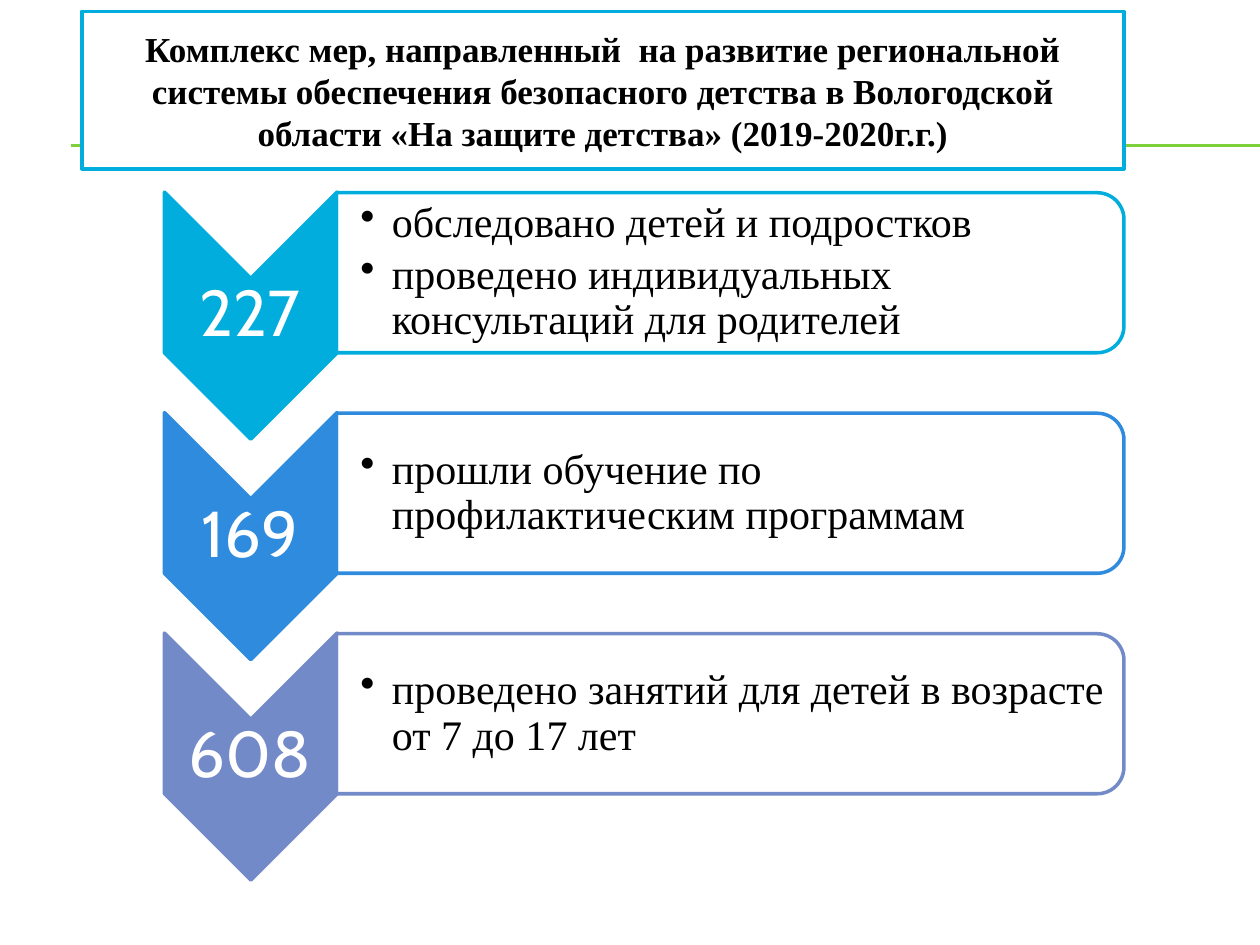
import pptx
import pptx.util
import pptx.dml.color
import pptx.enum.shapes
import pptx.enum.text
import pptx.oxml
import pptx.oxml.ns
import lxml.etree

Inches = pptx.util.Inches
Pt = pptx.util.Pt
MSO_SHAPE = pptx.enum.shapes.MSO_SHAPE
PP_ALIGN = pptx.enum.text.PP_ALIGN
SERIF, SANS = "Times New Roman", "Cabin"
COLORS = {"white": "FFFFFF", "black": "000000", "rule": "7FD13B",
          "cyan": "00ADDC", "blue": "2F8BDD", "violet": "738AC8"}


def rgb(name):
    return pptx.dml.color.RGBColor.from_string(COLORS[name])


def add_xml(parent, tag, **attrs):
    return lxml.etree.SubElement(parent, pptx.oxml.ns.qn(tag), **attrs)


class SlideBuilder:
    """Holds the style and the current slide."""

    def __init__(self, slide):
        self.s = slide
        self.line_width = Pt(2)

    def rule(self, x1, x2, y):
        line = self.s.shapes.add_connector(
            pptx.enum.shapes.MSO_CONNECTOR.STRAIGHT,
            Inches(x1), Inches(y), Inches(x2), Inches(y))
        line.line.color.rgb = rgb("rule")
        line.line.width = Pt(0.75)
        add_xml(line._element.spPr, "a:effectLst")

    def shape(self, kind, box, fill, outline, rotation=0, alpha=None):
        sp = self.s.shapes.add_shape(kind, *map(Inches, box))
        sp.rotation = rotation
        sp.shadow.inherit = False
        sp.fill.solid()
        sp.fill.fore_color.rgb = rgb(fill)
        sp.line.color.rgb = rgb(outline)
        sp.line.width = self.line_width
        if alpha:
            clr = sp._element.spPr.find(pptx.oxml.ns.qn("a:solidFill"))[0]
            add_xml(clr, "a:alpha", val=str(alpha * 1000))
        return sp

    def text_box(self, box, insets):
        sp = self.s.shapes.add_textbox(*map(Inches, box))
        tf = sp.text_frame
        tf.margin_left, tf.margin_top, tf.margin_right, tf.margin_bottom = map(Inches, insets)
        return tf

    def fill_text(self, tf, texts, size, font, color, align=PP_ALIGN.LEFT,
                  bold=False, spacing=1.0, after=0, bullet=False):
        tf.word_wrap = True
        tf.vertical_anchor = pptx.enum.text.MSO_ANCHOR.MIDDLE
        for i, text in enumerate(texts):
            p = tf.add_paragraph() if i else tf.paragraphs[0]
            p.alignment = align
            p.line_spacing = spacing
            p.space_after = Pt(after)
            if bullet:
                pPr = p._p.get_or_add_pPr()
                pPr.set("marL", str(Inches(0.25)))
                pPr.set("indent", str(-Inches(0.25)))
                add_xml(pPr, "a:buChar", char="•")
            r = p.add_run()
            r.text = text
            r.font.size = Pt(size)
            r.font.name = font
            r.font.bold = bold
            r.font.color.rgb = rgb(color)

    def title(self, box, text):
        sp = self.shape(MSO_SHAPE.RECTANGLE, box, "white", "cyan")
        self.fill_text(sp.text_frame, [text], 20, SERIF, "black", PP_ALIGN.CENTER, bold=True)

    def step(self, top, number, items, color):
        self.shape(MSO_SHAPE.CHEVRON, (1.01, top + 0.3, 1.96, 1.37), color, color, 90)
        tf = self.text_box((1.3, top + 0.69, 1.37, 0.59), [0.03] * 4)
        self.fill_text(tf, [number], 37, SANS, "white", PP_ALIGN.CENTER, spacing=0.9)
        self.shape(MSO_SHAPE.ROUND_2_SAME_RECTANGLE, (5.16, top - 2.48, 1.27, 6.25),
                   "white", color, 90, alpha=90)
        tf = self.text_box((2.67, top + 0.07, 6.19, 1.15), (0.19, 0.02, 0.02, 0.02))
        self.fill_text(tf, items, 24, SERIF, "black", spacing=0.9, after=3.6, bullet=True)


def main():
    prs = pptx.Presentation()
    prs.slide_width, prs.slide_height = Inches(10), Inches(7.5)
    b = SlideBuilder(prs.slides.add_slide(prs.slide_layouts[6]))
    for y in (1.15, 1.16):
        b.rule(0.56, 10, y)
    b.title((0.65, 0.09, 8.27, 1.25),
            "Комплекс мер, направленный  на развитие региональной системы обеспечения "
            "безопасного детства в Вологодской области «На защите детства» (2019-2020г.г.)")
    steps = [
        ("227", ["обследовано детей и подростков",
                 "проведено индивидуальных консультаций для родителей"], "cyan"),
        ("169", ["прошли обучение по  профилактическим программам"], "blue"),
        ("608", ["проведено занятий для детей в возрасте от 7 до 17 лет"], "violet"),
    ]
    for i, (number, items, color) in enumerate(steps):
        b.step(1.52 + 1.75 * i, number, items, color)
    prs.save("out.pptx")


if __name__ == "__main__":
    main()
